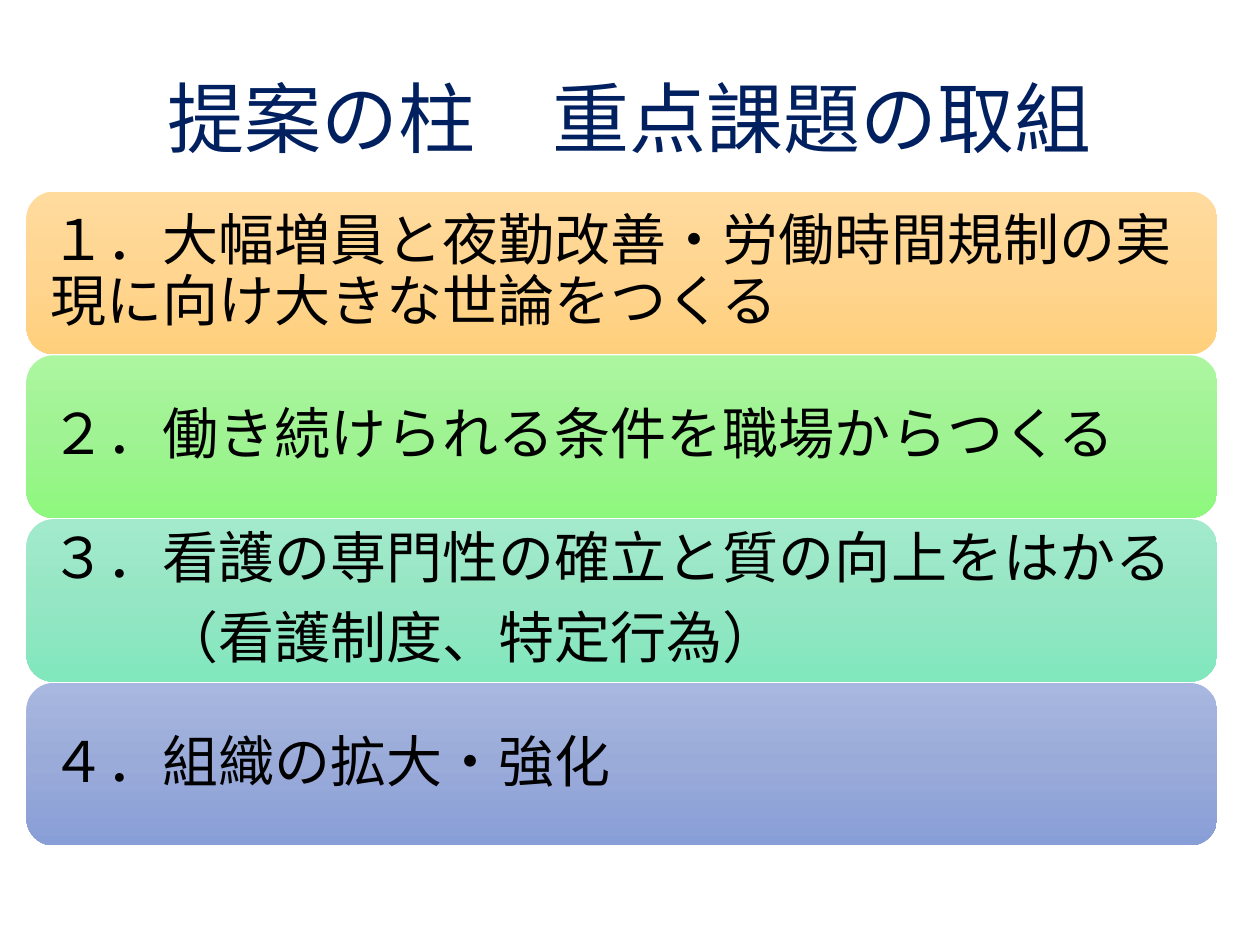
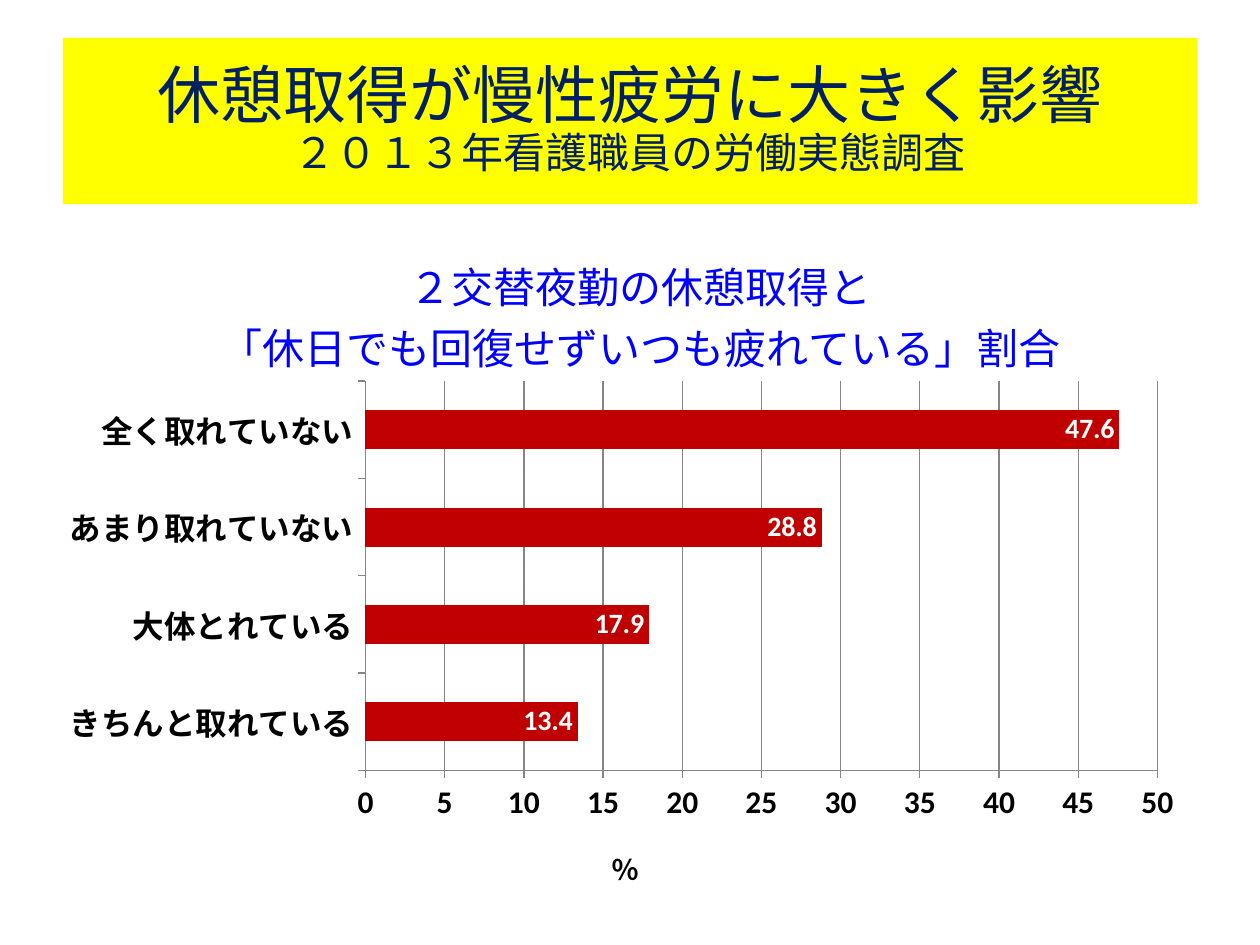
from copy import deepcopy
from dataclasses import dataclass

from lxml.etree import SubElement, Element
from pptx import Presentation
from pptx.chart.data import CategoryChartData
from pptx.dml.color import RGBColor
from pptx.enum.chart import XL_CHART_TYPE, XL_LABEL_POSITION, XL_TICK_MARK
from pptx.enum.shapes import MSO_SHAPE
from pptx.enum.text import MSO_ANCHOR, PP_ALIGN
from pptx.oxml.ns import qn
from pptx.util import Emu, Pt

# Shared scale, fonts and colours
PX = 9144  # 100 px to the inch
LATIN_FONT = "Calibri"
CHART_TITLE_FONT = "Noto Sans CJK JP"
NAVY = RGBColor(0x00, 0x20, 0x60)
BLACK = RGBColor(0x00, 0x00, 0x00)
WHITE = RGBColor(0xFF, 0xFF, 0xFF)
YELLOW = RGBColor(0xFF, 0xFF, 0x00)
BLUE = RGBColor(0x00, 0x00, 0xFF)
RED = RGBColor(0xC0, 0x00, 0x00)
GREY = RGBColor(0x86, 0x86, 0x86)
ORANGES = (RGBColor(0xFF, 0xDB, 0x9E), RGBColor(0xFF, 0xD5, 0x90), RGBColor(0xFF, 0xD0, 0x7C))
GREENS = (RGBColor(0xAC, 0xF6, 0xA0), RGBColor(0x9F, 0xF3, 0x92), RGBColor(0x8E, 0xF7, 0x7D))
TEALS = (RGBColor(0xA3, 0xEA, 0xCC), RGBColor(0x95, 0xE6, 0xC4), RGBColor(0x81, 0xE7, 0xBD))
PERIWINKLES = (RGBColor(0xA8, 0xB7, 0xDF), RGBColor(0x9A, 0xAB, 0xD9), RGBColor(0x88, 0x9E, 0xD7))


@dataclass(frozen=True)
class Box:
    left: int
    top: int
    width: int
    height: int

    def emu(self) -> tuple:
        return tuple(Emu(side * PX) for side in (self.left, self.top, self.width, self.height))


@dataclass(frozen=True)
class Pillar:
    heading: str
    colours: tuple
    detail: str = ""


# Cards for the four pillars
CARD_LEFT, CARD_TOP, CARD_WIDTH, CARD_HEIGHT, CARD_PITCH = 21, 152, 945, 129, 130
CARD_INSET = 13
CARD_SIZE = 32
PILLARS = (
    Pillar("１．大幅増員と夜勤改善・労働時間規制の実現に向け大きな世論をつくる", ORANGES),
    Pillar("２．働き続けられる条件を職場からつくる", GREENS),
    Pillar("３．看護の専門性の確立と質の向上をはかる", TEALS, "（看護制度、特定行為）"),
    Pillar("４．組織の拡大・強化", PERIWINKLES),
)

# Share of tired staff by how well breaks are taken
FATIGUE_RATES = {
    "きちんと取れている": 13.4,
    "大体とれている": 17.9,
    "あまり取れていない": 28.8,
    "全く取れていない": 47.6,
}


def style_font(font, size: int, colour: RGBColor, bold: bool = False, name: str = LATIN_FONT) -> None:
    font.name = name
    font.size = Pt(size)
    font.bold = bold
    font.color.rgb = colour


def write(para, text: str, *, size: int, colour: RGBColor, bold: bool = False,
          name: str = LATIN_FONT, align=None, line_spacing=None, space_after: int = 0) -> None:
    span = para.add_run()
    span.text = text
    style_font(span.font, size, colour, bold, name)
    if align is not None:
        para.alignment = align
    if line_spacing is not None:
        para.line_spacing = line_spacing
    if space_after:
        para.space_after = Pt(space_after)


def add_title(slide, box: Box, lines: tuple, fill=None) -> None:
    """Add a centred title; each line is a pair of text and point size."""
    title = slide.shapes.add_textbox(*box.emu())
    if fill is not None:
        title.fill.solid()
        title.fill.fore_color.rgb = fill
    frame = title.text_frame
    frame.word_wrap = True
    frame.vertical_anchor = MSO_ANCHOR.MIDDLE
    para = frame.paragraphs[0]
    for index, (text, size) in enumerate(lines):
        if index:
            para.add_line_break()
        write(para, text, size=size, colour=NAVY, align=PP_ALIGN.CENTER, line_spacing=0.9)


def fill_gradient(shape, colours: tuple) -> None:
    shape.fill.gradient()
    shape.fill.gradient_angle = 270
    stop_list = shape._element.spPr.find(".//" + qn("a:gsLst"))
    stop_list.insert(1, deepcopy(stop_list[0]))
    for index, (stop, colour) in enumerate(zip(shape.fill.gradient_stops, colours)):
        stop.position = index / 2
        stop.color.rgb = colour


def add_pillar(slide, box: Box, pillar: Pillar) -> None:
    card = slide.shapes.add_shape(MSO_SHAPE.ROUNDED_RECTANGLE, *box.emu())
    card.shadow.inherit = False
    card.line.fill.background()
    fill_gradient(card, pillar.colours)
    frame = card.text_frame
    frame.word_wrap = True
    frame.vertical_anchor = MSO_ANCHOR.MIDDLE
    inset = Emu(CARD_INSET * PX)
    frame.margin_left = frame.margin_right = frame.margin_top = frame.margin_bottom = inset
    look = dict(size=CARD_SIZE, colour=BLACK, align=PP_ALIGN.LEFT, line_spacing=0.9, space_after=11)
    write(frame.paragraphs[0], pillar.heading, **look)
    if pillar.detail:
        para = frame.add_paragraph()
        write(para, pillar.detail, **look)
        # Indent by two full-width characters
        para._p.get_or_add_pPr().set("marL", str(Pt(2 * CARD_SIZE)))


def place_in_chart(parent, index: int, **fractions: float) -> None:
    """Give a chart part a manual layout in fractions of the chart area."""
    present = parent.find(qn("c:layout"))
    if present is not None:
        parent.remove(present)
    layout = Element(qn("c:layout"))
    parent.insert(index, layout)
    manual = SubElement(layout, qn("c:manualLayout"))
    if "w" in fractions:
        SubElement(manual, qn("c:layoutTarget")).set("val", "inner")
    for axis in ("x", "y"):
        SubElement(manual, qn(f"c:{axis}Mode")).set("val", "edge")
    for side, value in fractions.items():
        SubElement(manual, qn(f"c:{side}")).set("val", str(value))


def style_axis(axis) -> None:
    axis.major_tick_mark = XL_TICK_MARK.OUTSIDE
    axis.minor_tick_mark = XL_TICK_MARK.NONE
    axis.format.line.color.rgb = GREY
    style_font(axis.tick_labels.font, 18, BLACK, bold=True)


def add_fatigue_chart(slide, box: Box) -> None:
    rates = CategoryChartData()
    rates.categories = list(FATIGUE_RATES)
    rates.add_series("Series 1", list(FATIGUE_RATES.values()))
    chart = slide.shapes.add_chart(XL_CHART_TYPE.BAR_CLUSTERED, *box.emu(), rates).chart
    chart.has_legend = False
    style_font(chart.font, 10, BLACK)

    # Heading
    chart.has_title = True
    frame = chart.chart_title.text_frame
    look = dict(size=24, colour=BLUE, name=CHART_TITLE_FONT, align=PP_ALIGN.CENTER)
    write(frame.paragraphs[0], "２交替夜勤の休憩取得と", **look)
    write(frame.add_paragraph(), "「休日でも回復せずいつも疲れている」割合", **look)
    place_in_chart(chart.chart_title._element, 1, x=0.15, y=0.05)

    # Axes
    style_axis(chart.category_axis)
    values = chart.value_axis
    style_axis(values)
    values.minimum_scale, values.maximum_scale, values.major_unit = 0, 50, 5
    values.has_major_gridlines = True
    values.major_gridlines.format.line.color.rgb = GREY
    write(values.axis_title.text_frame.paragraphs[0], "％", size=16, colour=BLACK, bold=True)
    place_in_chart(values.axis_title._element, 1, x=0.49, y=0.9)
    place_in_chart(chart._chartSpace.chart.plotArea, 0, x=0.28, y=0.24, w=0.69, h=0.56)

    # Bars and their values
    plot = chart.plots[0]
    plot.gap_width = 150
    plot.vary_by_categories = False
    series = plot.series[0]
    series.format.fill.solid()
    series.format.fill.fore_color.rgb = RED
    labels = series.data_labels
    labels.show_value = True
    labels.position = XL_LABEL_POSITION.INSIDE_END
    style_font(labels.font, 16, WHITE, bold=True)


def main() -> None:
    deck = Presentation()
    deck.slide_width, deck.slide_height = Emu(1000 * PX), Emu(750 * PX)
    blank = deck.slide_layouts[6]

    # Slide 1: the four pillars
    page = deck.slides.add_slide(blank)
    for index, pillar in enumerate(PILLARS):
        top = CARD_TOP + index * CARD_PITCH
        add_pillar(page, Box(CARD_LEFT, top, CARD_WIDTH, CARD_HEIGHT), pillar)
    add_title(page, Box(69, 40, 862, 115), (("提案の柱　重点課題の取組", 44),))

    # Slide 2: breaks and chronic fatigue
    page = deck.slides.add_slide(blank)
    lines = (("休憩取得が慢性疲労に大きく影響", 36), ("２０１３年看護職員の労働実態調査", 24))
    add_title(page, Box(50, 30, 900, 132), lines, fill=YELLOW)
    add_fatigue_chart(page, Box(35, 170, 911, 552))

    deck.save("out.pptx")


if __name__ == "__main__":
    main()
